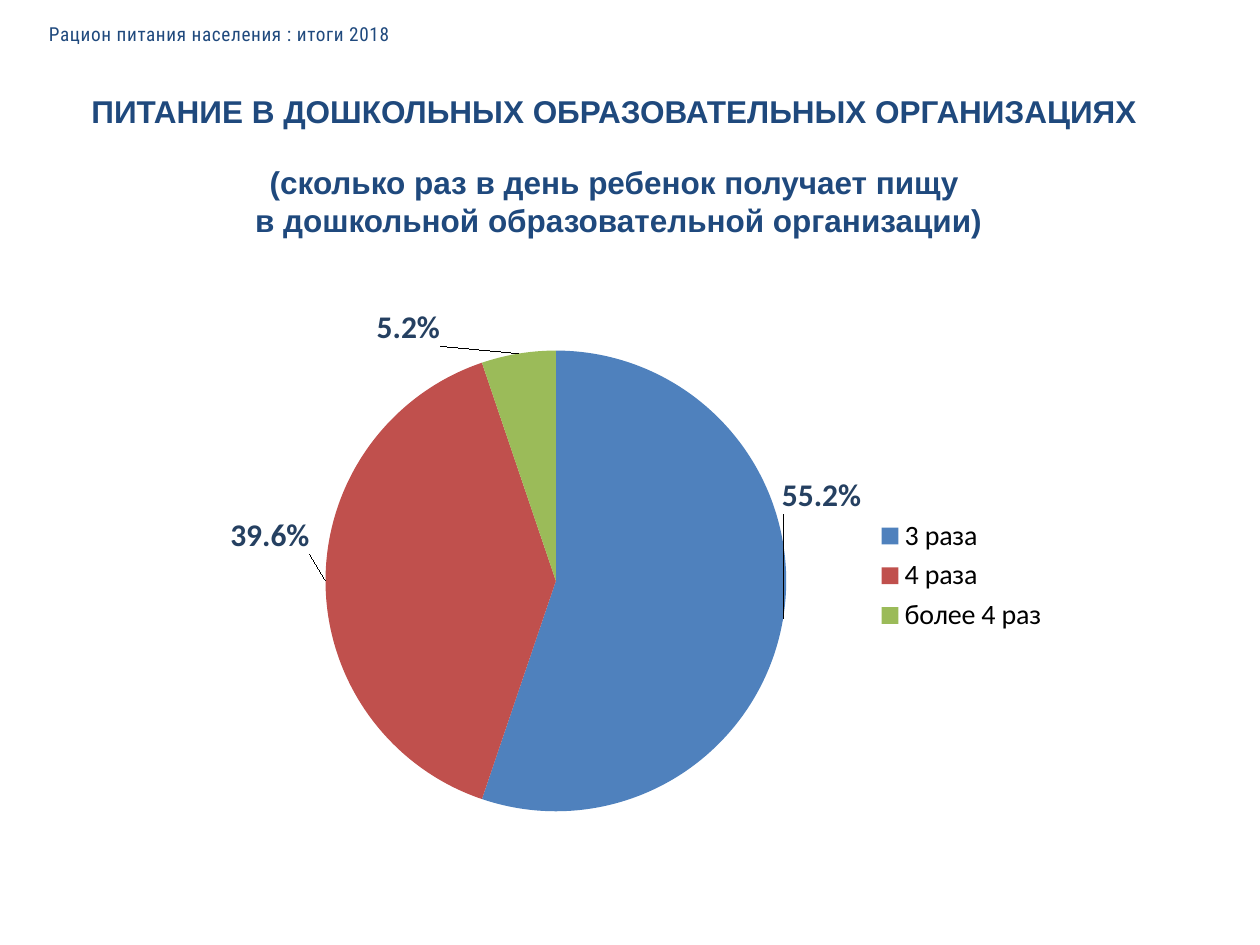
"""Build the slide on how often children eat in preschools."""
from dataclasses import dataclass

import lxml.etree
import pptx
import pptx.chart.data
import pptx.dml.color
import pptx.enum.chart
import pptx.enum.text
import pptx.oxml
import pptx.oxml.ns
import pptx.util

HUES = {"navy": "1F497D", "label": "254061", "black": "000000",
        "blue": "4F81BD", "red": "C0504D", "green": "9BBB59"}
FORMAT = "0.0%"


@dataclass
class Slice:
    name: str
    share: float
    hue: str
    dx: float
    dy: float


@dataclass
class Line:
    text: str
    before: float = 0


SLICES = [
    Slice("3 раза", 0.552, "blue", -0.01, -0.25),
    Slice("4 раза", 0.396, "red", -0.01, -0.08),
    Slice("более 4 раз", 0.052, "green", -0.09, 0),
]
LINES = [
    Line("ПИТАНИЕ В ДОШКОЛЬНЫХ ОБРАЗОВАТЕЛЬНЫХ ОРГАНИЗАЦИЯХ "),
    Line("(сколько раз в день ребенок получает пищу ", 19),
    Line("в дошкольной образовательной организации)"),
]


def paint(font, face: str, size: float, hue: str, bold: bool = False) -> None:
    """Set the look of a font."""
    font.name, font.size, font.bold = face, pptx.util.Pt(size), bold
    font.color.rgb = pptx.dml.color.RGBColor.from_string(HUES[hue])


def place(shape, left: float, top: float, width: float, height: float) -> None:
    """Move and size a shape in inches."""
    shape.left, shape.top = pptx.util.Inches(left), pptx.util.Inches(top)
    shape.width, shape.height = pptx.util.Inches(width), pptx.util.Inches(height)


def layout(**parts: object) -> lxml.etree._Element:
    """Make a manual chart layout."""
    body = "".join(f'<c:{key} val="{val}"/>' for key, val in parts.items())
    return pptx.oxml.parse_xml(
        f'<c:layout {pptx.oxml.ns.nsdecls("c")}>'
        f"<c:manualLayout>{body}</c:manualLayout></c:layout>")


def add_title(slide, lines: list[Line]) -> None:
    """Fill the title placeholder."""
    place(slide.shapes.title, 0.43, 0.68, 8.96, 1.62)
    frame = slide.shapes.title.text_frame
    frame.word_wrap = False
    frame.auto_size = pptx.enum.text.MSO_AUTO_SIZE.NONE
    frame.vertical_anchor = pptx.enum.text.MSO_ANCHOR.TOP
    frame.text = "\n".join(line.text for line in lines)
    for par, line in zip(frame.paragraphs, lines):
        par.alignment = pptx.enum.text.PP_ALIGN.CENTER
        par.line_spacing = pptx.util.Pt(21.7)
        if line.before:
            par.space_before = pptx.util.Pt(line.before)
        paint(par.font, "Arial", 18, "navy", True)


def add_header(slide, text: str) -> None:
    """Add the small running header."""
    box = slide.shapes.add_textbox(0, 0, 0, 0)
    place(box, 0.29, 0.13, 2.93, 0.29)
    box.text_frame.word_wrap = False
    par = box.text_frame.paragraphs[0]
    par.text = text
    par.runs[0]._r.get_or_add_rPr().set("spc", "35")
    paint(par.font, "Roboto Condensed", 11, "navy")


def add_pie(slide, slices: list[Slice]) -> None:
    """Add the pie chart with its labels and legend."""
    data = pptx.chart.data.CategoryChartData(number_format=FORMAT)
    data.categories = [part.name for part in slices]
    data.add_series("Series 1", [part.share for part in slices])
    frame = slide.shapes.add_chart(
        pptx.enum.chart.XL_CHART_TYPE.PIE, 0, 0, 0, 0, data)
    place(frame, 1.61, 2.29, 6.81, 4.56)
    chart = frame.chart
    paint(chart.font, "Calibri", 18, "black")
    chart.has_title = False
    chart.has_legend = True
    chart.legend.position = pptx.enum.chart.XL_LEGEND_POSITION.RIGHT
    chart.legend.include_in_layout = False
    paint(chart.legend.font, "Calibri", 16, "black")

    area = chart._chartSpace.chart.plotArea
    for old in area.findall(pptx.oxml.ns.qn("c:layout")):
        area.remove(old)
    area.insert(0, layout(layoutTarget="inner", xMode="edge", yMode="edge",
                          x=0.143, y=0.106, w=0.537, h=0.806))

    plot = chart.plots[0]
    plot.vary_by_categories = True
    series = plot.series[0]
    labels = series.data_labels
    labels.show_value = True
    labels.show_percentage = False
    labels.number_format = FORMAT
    labels.number_format_is_linked = False
    paint(labels.font, "Calibri", 18, "label", True)
    for spot, part in enumerate(slices):
        point = series.points[spot]
        point.format.fill.solid()
        point.format.fill.fore_color.rgb = pptx.dml.color.RGBColor.from_string(
            HUES[part.hue])
        label = point.data_label
        paint(label.font, "Calibri", 18, "label", True)
        label.position = pptx.enum.chart.XL_LABEL_POSITION.OUTSIDE_END
    for node, part in zip(
            labels._element.findall(pptx.oxml.ns.qn("c:dLbl")), slices):
        node.insert(1, layout(x=part.dx, y=part.dy))
        node.insert(2, pptx.oxml.parse_xml(
            f'<c:numFmt {pptx.oxml.ns.nsdecls("c")} '
            f'formatCode="{FORMAT}" sourceLinked="0"/>'))


def main() -> None:
    """Build and save the deck."""
    deck = pptx.Presentation()
    deck.slide_width = pptx.util.Inches(10)
    deck.slide_height = pptx.util.Inches(7.5)
    slide = deck.slides.add_slide(deck.slide_layouts[5])
    add_title(slide, LINES)
    add_header(slide, "Рацион питания населения : итоги 2018")
    add_pie(slide, SLICES)
    deck.save("out.pptx")


if __name__ == "__main__":
    main()
